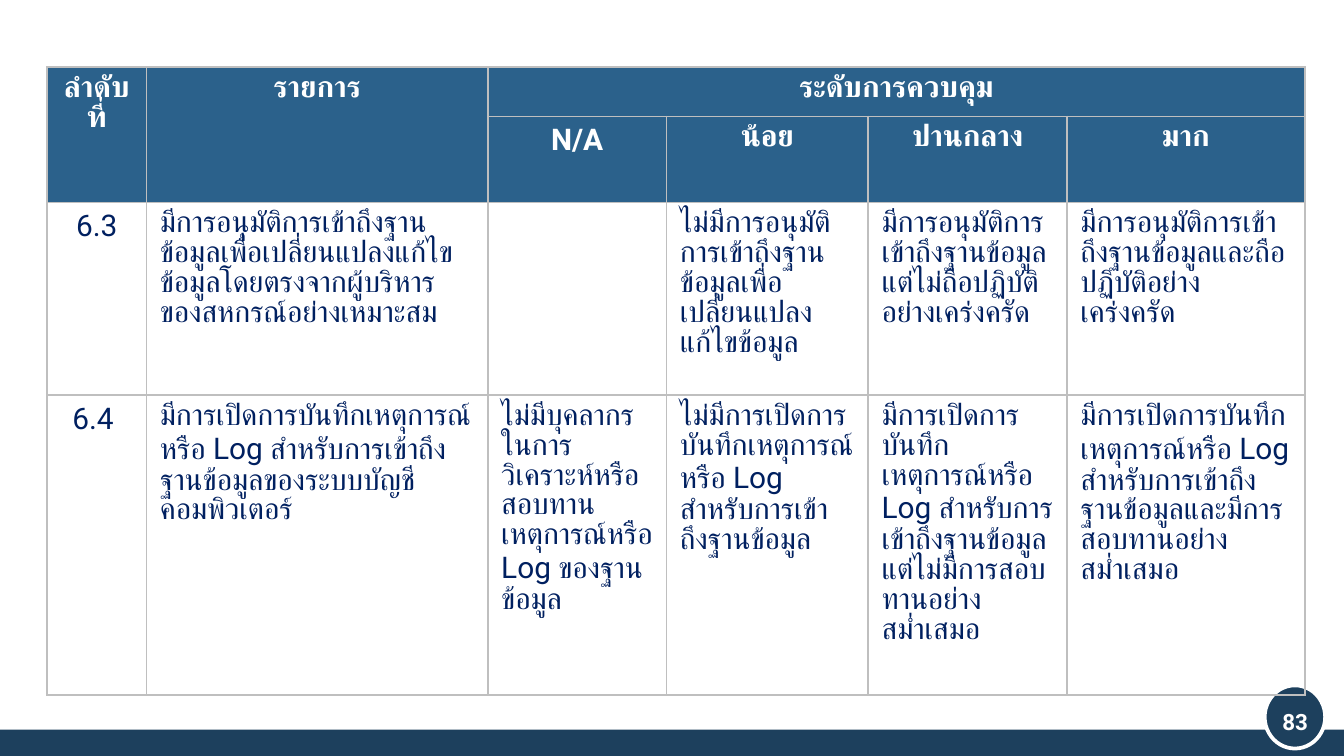
from dataclasses import dataclass

from lxml import etree
from pptx import Presentation
from pptx.dml.color import RGBColor
from pptx.enum.shapes import MSO_SHAPE
from pptx.enum.text import MSO_ANCHOR, PP_ALIGN
from pptx.oxml.ns import qn
from pptx.util import Inches, Pt

RECTANGLE, OVAL = MSO_SHAPE.RECTANGLE, MSO_SHAPE.OVAL
LEFT, CENTER, RIGHT = PP_ALIGN.LEFT, PP_ALIGN.CENTER, PP_ALIGN.RIGHT
MIDDLE = MSO_ANCHOR.MIDDLE
BLANK_LAYOUT = 6


@dataclass(frozen=True)
class Theme:
    font: str = "Roboto"
    navy: str = "1D405D"
    header: str = "2B618B"
    body: str = "002060"
    white: str = "FFFFFF"
    border: str = "BFBFBF"
    table_size: int = 16
    number_size: int = 12


THEME = Theme()
SLIDE_WIDTH = 10
SLIDE_HEIGHT = SLIDE_WIDTH * 9 / 16
TABLE_LEFT, TABLE_TOP = 0.35, 0.5
COLUMN_WIDTHS = [0.74, 2.54, 1.33, 1.5, 1.48, 1.77]
ROW_HEIGHTS = [0.36, 0.64, 1.43, 2.23]
HEADER_ROWS = 2
MERGES = [((0, 0), (1, 0)), ((0, 1), (1, 1)), ((0, 2), (0, 5))]
PAGE_NUMBER = "83"

ROWS = [
    ["ลำดับ\nที่", "รายการ", "ระดับการควบคุม", "", "", ""],
    ["", "", "N/A", "น้อย", "ปานกลาง", "มาก"],
    [
        "6.3",
        "มีการอนุมัติการเข้าถึงฐานข้อมูลเพื่อเปลี่ยนแปลงแก้ไขข้อมูลโดยตรงจากผู้บริหารของสหกรณ์อย่างเหมาะสม",
        "",
        "ไม่มีการอนุมัติการเข้าถึงฐานข้อมูลเพื่อเปลี่ยนแปลงแก้ไขข้อมูล",
        "มีการอนุมัติการเข้าถึงฐานข้อมูลแต่ไม่ถือปฏิบัติอย่างเคร่งครัด",
        "มีการอนุมัติการเข้าถึงฐานข้อมูลและถือปฏิบัติอย่างเคร่งครัด",
    ],
    [
        "6.4 ",
        "มีการเปิดการบันทึกเหตุการณ์หรือ Log สำหรับการเข้าถึงฐานข้อมูลของระบบบัญชีคอมพิวเตอร์",
        "ไม่มีบุคลากรในการวิเคราะห์หรือสอบทานเหตุการณ์หรือ Log ของฐานข้อมูล",
        "ไม่มีการเปิดการบันทึกเหตุการณ์หรือ Log สำหรับการเข้าถึงฐานข้อมูล",
        "มีการเปิดการบันทึกเหตุการณ์หรือ Log สำหรับการเข้าถึงฐานข้อมูลแต่ไม่มีการสอบทานอย่างสม่ำเสมอ",
        "มีการเปิดการบันทึกเหตุการณ์หรือ Log สำหรับการเข้าถึงฐานข้อมูลและมีการสอบทานอย่างสม่ำเสมอ",
    ],
]


def color(value):
    return RGBColor.from_string(value)


def write(text_frame, text, size, ink, bold, alignment):
    text_frame.text = text
    for paragraph in text_frame.paragraphs:
        paragraph.alignment = alignment
        paragraph.font.size = Pt(size)
        for run in paragraph.runs:
            run.font.name = THEME.font
            run.font.size = Pt(size)
            run.font.bold = bold
            run.font.color.rgb = color(ink)


def add_footer_shape(slide, kind, left, top, width, height):
    shape = slide.shapes.add_shape(
        kind, Inches(left), Inches(top), Inches(width), Inches(height)
    )
    shape.shadow.inherit = False
    shape.fill.solid()
    shape.fill.fore_color.rgb = color(THEME.navy)
    shape.line.fill.background()
    return shape


def add_footer(slide):
    add_footer_shape(slide, RECTANGLE, 0, 5.43, SLIDE_WIDTH, 0.2)
    badge = add_footer_shape(slide, OVAL, 9.41, 5.1, 0.45, 0.47)
    badge.line.color.rgb = color(THEME.white)
    badge.line.width = Pt(2)

    number = slide.shapes.add_textbox(
        Inches(9.35), Inches(5.19), Inches(0.48), Inches(0.35)
    )
    text_frame = number.text_frame
    text_frame.word_wrap = True
    text_frame.vertical_anchor = MIDDLE
    text_frame.margin_left = text_frame.margin_right = Inches(0.1)
    text_frame.margin_top = text_frame.margin_bottom = Inches(0.1)
    write(text_frame, PAGE_NUMBER, THEME.number_size, THEME.white, True, RIGHT)


def add_borders(cell):
    properties = cell._tc.get_or_add_tcPr()
    for position, side in enumerate(("lnL", "lnR", "lnT", "lnB")):
        line = etree.Element(qn(f"a:{side}"), w=str(Pt(1)))
        fill = etree.SubElement(line, qn("a:solidFill"))
        etree.SubElement(fill, qn("a:srgbClr"), val=THEME.border)
        properties.insert(position, line)


def format_cell(cell, text, is_header, is_number):
    if is_header:
        cell.fill.solid()
        cell.fill.fore_color.rgb = color(THEME.header)
    else:
        cell.fill.background()
    ink = THEME.white if is_header else THEME.body
    alignment = CENTER if is_header or is_number else LEFT
    write(cell.text_frame, text, THEME.table_size, ink, is_header, alignment)
    add_borders(cell)


def add_control_table(slide):
    table = slide.shapes.add_table(
        len(ROW_HEIGHTS), len(COLUMN_WIDTHS),
        Inches(TABLE_LEFT), Inches(TABLE_TOP),
        Inches(sum(COLUMN_WIDTHS)), Inches(sum(ROW_HEIGHTS)),
    ).table
    table.first_row = table.horz_banding = False
    for column, width in zip(table.columns, COLUMN_WIDTHS):
        column.width = Inches(width)
    for row, height in zip(table.rows, ROW_HEIGHTS):
        row.height = Inches(height)
    for row_index, texts in enumerate(ROWS):
        for column_index, text in enumerate(texts):
            cell = table.cell(row_index, column_index)
            format_cell(cell, text, row_index < HEADER_ROWS, column_index == 0)
    for first, last in MERGES:
        table.cell(*first).merge(table.cell(*last))


def main():
    presentation = Presentation()
    presentation.slide_width = Inches(SLIDE_WIDTH)
    presentation.slide_height = Inches(SLIDE_HEIGHT)
    slide = presentation.slides.add_slide(presentation.slide_layouts[BLANK_LAYOUT])
    add_footer(slide)
    add_control_table(slide)
    presentation.save("out.pptx")


if __name__ == "__main__":
    main()
